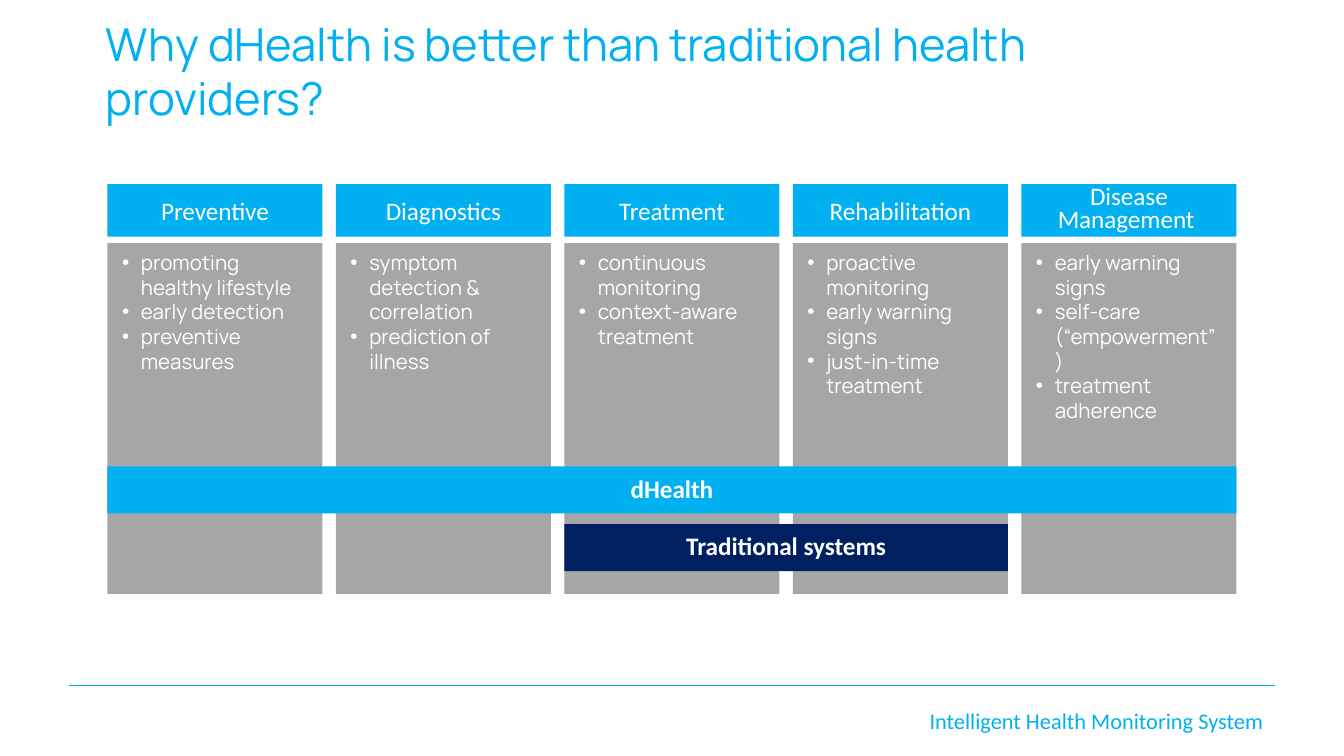
from lxml.etree import SubElement
from pptx import Presentation
from pptx.dml.color import RGBColor
from pptx.enum.shapes import MSO_CONNECTOR as Connector, MSO_SHAPE as Shape
from pptx.enum.text import MSO_ANCHOR as Anchor, PP_ALIGN as Align
from pptx.oxml.ns import qn
from pptx.util import Inches, Pt

# Content
TITLE = "Why dHealth is better than traditional health providers?"
FOOTER = "Intelligent Health Monitoring System"
STAGES = [
    ("Preventive", ["promoting healthy lifestyle", "early detection", "preventive measures"]),
    ("Diagnostics", ["symptom detection & correlation", "prediction of illness"]),
    ("Treatment", ["continuous monitoring", "context-aware treatment"]),
    ("Rehabilitation", ["proactive monitoring", "early warning signs", "just-in-time treatment"]),
    ("Disease Management ", ["early warning signs", "self-care (“empowerment”)", "treatment adherence"]),
]
# Label, first stage, last stage, top, fill
COVERAGE = [("dHealth", 0, 4, 3.47, "accent"), ("Traditional systems", 2, 3, 3.9, "navy")]

THEME = {
    "accent": RGBColor(0x00, 0xB0, 0xF0),
    "navy": RGBColor(0x00, 0x20, 0x60),
    "panel": RGBColor(0xA6, 0xA6, 0xA6),
    "white": RGBColor(0xFF, 0xFF, 0xFF),
    "heading_font": "Manrope",
    "label_font": "Calibri",
    "title_size": 24.3,
    "label_size": 13.5,
    "body_size": 11,
    "footer_size": 12,
}
SLIDE_WIDTH = 10
SLIDE_HEIGHT = SLIDE_WIDTH * 9 / 16
LEFT, PITCH, COLUMN_WIDTH = 0.8, 1.7, 1.6
HEADER_TOP, HEADER_HEIGHT = 1.37, 0.39
PANEL_TOP, PANEL_HEIGHT = 1.81, 2.61
BAR_HEIGHT = 0.35


def write(shape, lines, font, size, color, align=Align.LEFT, anchor=Anchor.MIDDLE,
          bold=False, spacing=None, bullets=False):
    frame = shape.text_frame
    frame.word_wrap = True
    frame.vertical_anchor = anchor
    for index, line in enumerate(lines):
        paragraph = frame.paragraphs[0] if index == 0 else frame.add_paragraph()
        paragraph.text = line
        paragraph.alignment = align
        if spacing:
            paragraph.line_spacing = spacing
        if bullets:
            properties = paragraph._p.get_or_add_pPr()
            properties.set("marL", str(Inches(0.15)))
            properties.set("indent", str(Inches(-0.14)))
            SubElement(properties, qn("a:buFont")).set("typeface", "Arial")
            SubElement(properties, qn("a:buChar")).set("char", "•")
        paragraph.font.name = THEME[font]
        paragraph.font.size = Pt(THEME[size])
        paragraph.font.color.rgb = THEME[color]
        paragraph.font.bold = bold


def add_block(left, top, width, height, fill):
    shape = slide.shapes.add_shape(
        Shape.RECTANGLE, Inches(left), Inches(top), Inches(width), Inches(height))
    shape.shadow.inherit = False
    shape.fill.solid()
    shape.fill.fore_color.rgb = THEME[fill]
    shape.line.fill.background()
    return shape


def column_left(index):
    return LEFT + index * PITCH


presentation = Presentation()
presentation.slide_width = Inches(SLIDE_WIDTH)
presentation.slide_height = Inches(SLIDE_HEIGHT)
slide = presentation.slides.add_slide(presentation.slide_layouts[6])

# Footer rule and text
rule = slide.shapes.add_connector(
    Connector.STRAIGHT, Inches(0.51), Inches(5.1), Inches(9.49), Inches(5.1))
rule.line.color.rgb = THEME["accent"]
rule.line.width = Pt(0.75)
SubElement(rule._element.spPr, qn("a:effectLst"))
footer = slide.shapes.add_textbox(Inches(5), Inches(5.1), Inches(4.5), Inches(0.52))
write(footer, [FOOTER], "label_font", "footer_size", "accent", Align.RIGHT)

# Title
title = slide.shapes.add_textbox(Inches(0.69), Inches(0.3), Inches(8.62), Inches(0.45))
write(title, [TITLE], "heading_font", "title_size", "accent")

# Care stages: a panel of points under each header
for index, (stage, points) in enumerate(STAGES):
    left = column_left(index)
    panel = add_block(left, PANEL_TOP, COLUMN_WIDTH, PANEL_HEIGHT, "panel")
    write(panel, points, "heading_font", "body_size", "white", anchor=Anchor.TOP, bullets=True)
    header = add_block(left, HEADER_TOP, COLUMN_WIDTH, HEADER_HEIGHT, "accent")
    write(header, [stage], "label_font", "label_size", "white", Align.CENTER,
          spacing=Pt(12.2) if " " in stage else None)

# Coverage bars across the stages
for label, first, last, top, fill in COVERAGE:
    left = column_left(first)
    width = column_left(last) + COLUMN_WIDTH - left
    bar = add_block(left, top, width, BAR_HEIGHT, fill)
    write(bar, [label], "label_font", "label_size", "white", Align.CENTER, Anchor.TOP, bold=True)

presentation.save("out.pptx")
